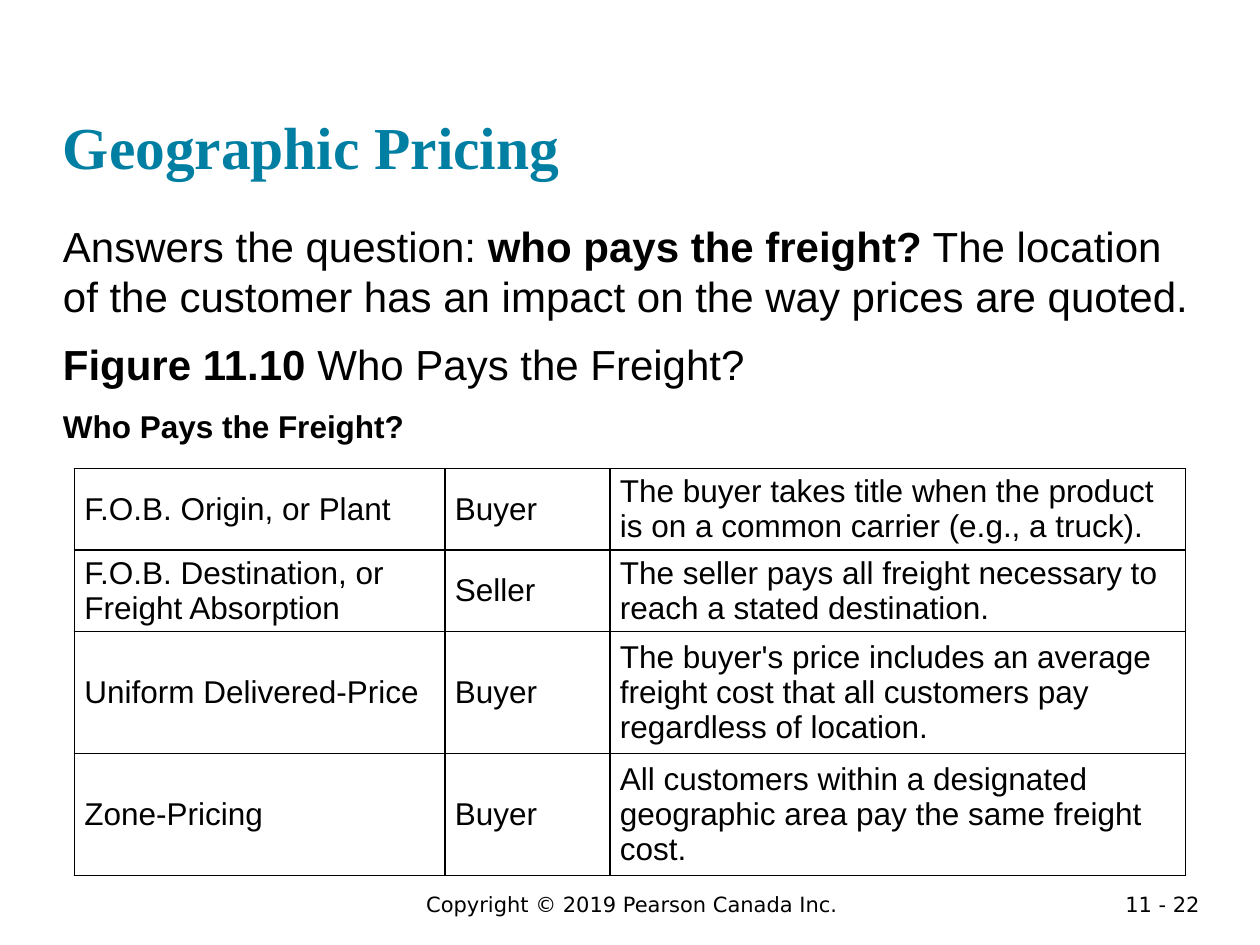
from pptx import Presentation
from pptx.dml.color import RGBColor
from pptx.enum.text import MSO_ANCHOR, PP_ALIGN
from pptx.oxml import parse_xml
from pptx.oxml.ns import nsdecls
from pptx.util import Inches, Pt

INK = {"title": "007FA3", "text": "000000"}
COLS, ROWS = 100, 75
BODY, HEAD, FOOT = "Arial", "Times New Roman", "DejaVu Sans"

deck = Presentation()
deck.slide_width, deck.slide_height = Inches(10), Inches(7.5)
slide = deck.slides.add_slide(deck.slide_layouts[6])


def across(cols):
    return round(deck.slide_width * cols / COLS)


def down(rows):
    return round(deck.slide_height * rows / ROWS)


def place(box):
    """Turn grid columns and rows into slide lengths."""
    x, y, w, h = box
    return across(x), down(y), across(w), down(h)


def add_run(para, text, size, font=BODY, bold=False, ink="text"):
    run = para.add_run()
    run.text = text
    run.font.size = Pt(size)
    run.font.name = font
    run.font.bold = bold
    run.font.color.rgb = RGBColor.from_string(INK[ink])


def add_frame(box, flush=False):
    frame = slide.shapes.add_textbox(*place(box)).text_frame
    frame.word_wrap = True
    if flush:
        frame.margin_left = frame.margin_right = 0
        frame.margin_top = frame.margin_bottom = 0
    return frame


def add_title(box):
    frame = add_frame(box, flush=True)
    frame.vertical_anchor = MSO_ANCHOR.BOTTOM
    add_run(frame.paragraphs[0], "Geographic Pricing", 34, HEAD, True, "title")


def add_intro(box):
    lines = [
        (24, [("Answers the question: ", False),
              ("who pays the freight?", True),
              (" The location of the customer has an impact on the way "
               "prices are quoted.", False)]),
        (24, [("Figure 11.10 ", True), ("Who Pays the Freight?", False)]),
        (18, [("Who Pays the Freight?", True)]),
    ]
    frame = add_frame(box, flush=True)
    for i, (size, runs) in enumerate(lines):
        para = frame.add_paragraph() if i else frame.paragraphs[0]
        if i:
            para.space_before = Pt(10)
        for text, bold in runs:
            add_run(para, text, size, bold=bold)


def add_rules(cell):
    """Draw a thin line on each side of the cell."""
    props = cell._tc.get_or_add_tcPr()
    for side in "LRTB":
        props.append(parse_xml(
            f'<a:ln{side} {nsdecls("a")} w="{Pt(1)}"><a:solidFill>'
            f'<a:srgbClr val="{INK["text"]}"/></a:solidFill></a:ln{side}>'))


def add_grid(box):
    data = [
        ("F.O.B. Origin, or Plant", "Buyer",
         "The buyer takes title when the product is on a common carrier "
         "(e.g., a truck)."),
        ("F.O.B. Destination, or Freight Absorption", "Seller",
         "The seller pays all freight necessary to reach a stated "
         "destination."),
        ("Uniform Delivered-Price", "Buyer",
         "The buyer's price includes an average freight cost that all "
         "customers pay regardless of location."),
        ("Zone-Pricing", "Buyer",
         "All customers within a designated geographic area pay the same "
         "freight cost."),
    ]
    widths, heights = (29.4, 13.1, 45.7), (2, 2, 3, 3)
    table = slide.shapes.add_table(len(data), len(widths), *place(box)).table
    table.first_row = table.horz_banding = False
    for col, width in zip(table.columns, widths):
        col.width = across(box[2] * width / sum(widths))
    for row, height, texts in zip(table.rows, heights, data):
        row.height = down(box[3] * height / sum(heights))
        for cell, text in zip(row.cells, texts):
            cell.margin_left, cell.margin_right = Inches(0.08), Inches(0.04)
            cell.margin_top = cell.margin_bottom = 0
            cell.vertical_anchor = MSO_ANCHOR.MIDDLE
            add_rules(cell)
            cell.fill.background()
            add_run(cell.text_frame.paragraphs[0], text, 18)


def add_foot(box, text, align):
    para = add_frame(box).paragraphs[0]
    para.alignment = align
    add_run(para, text, 12, FOOT)


add_foot((16.4, 70.3, 67.5, 3), "Copyright © 2019 Pearson Canada Inc.",
         PP_ALIGN.CENTER)
add_foot((86.2, 70.3, 10, 2.2), "11 - 22", PP_ALIGN.RIGHT)
add_title((5, 2.4, 90, 12))
add_intro((5, 17.5, 90, 18.4))
add_grid((5.9, 37.2, 88.2, 32.3))
deck.save("out.pptx")
